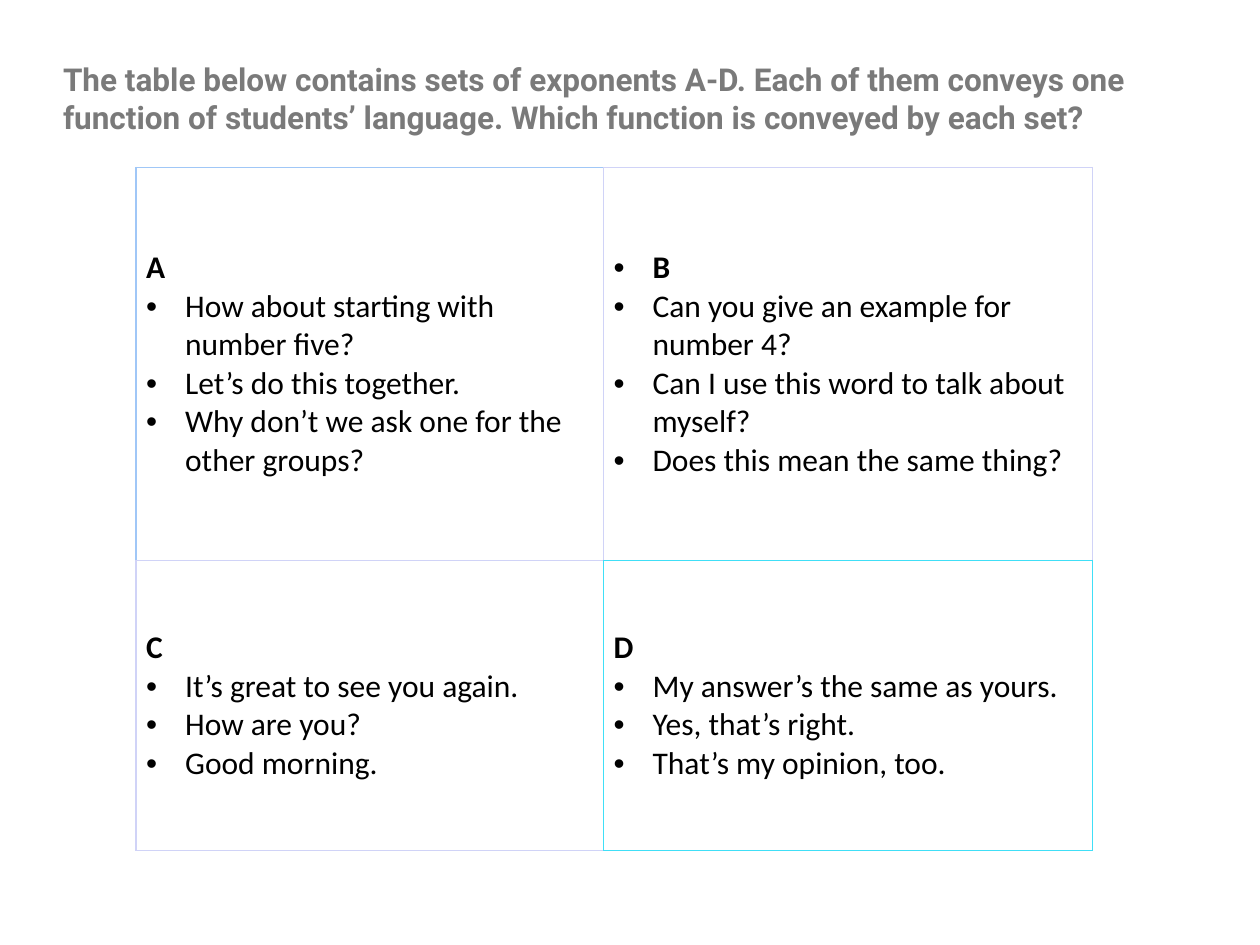
from lxml.etree import SubElement
from pptx import Presentation
from pptx.dml.color import RGBColor
from pptx.enum.text import MSO_ANCHOR
from pptx.oxml.ns import qn
from pptx.util import Inches, Pt

COLORS = {"title": "7A7A7A", "text": "000000", "blue": "A0C7F7",
          "lilac": "D0D3F7", "cyan": "40DFF7"}
COL_WIDTHS = [3.71, 3.88]
ROW_HEIGHTS = [3.12, 2.3]
INSET, INDENT = 0.08, 0.31

# Letter, whether the letter is bulleted, exponents, borders (left, right, top, bottom)
SETS = [
    ("A", False,
     ["How about starting with number five?", "Let’s do this together.",
      "Why don’t we ask one for the other groups?"],
     [("blue", 1), ("lilac", 1), ("blue", 1), ("lilac", 1)]),
    ("B", True,
     ["Can you give an example for number 4?",
      "Can I use this word to talk about myself?",
      "Does this mean the same thing?"],
     [("lilac", 1), ("lilac", 0.75), ("lilac", 1), ("cyan", 1)]),
    ("C", False,
     ["It’s great to see you again.", "How are you?", "Good morning."],
     [("lilac", 1), ("cyan", 1), ("lilac", 1), ("lilac", 0.75)]),
    ("D", False,
     ["My answer’s the same as yours.", "Yes, that’s right.",
      "That’s my opinion, too."],
     [("cyan", 1), ("cyan", 0.75), ("cyan", 1), ("cyan", 0.75)]),
]


def style(p, name, color, bold):
    p.font.name, p.font.size, p.font.bold = name, Pt(18), bold
    p.font.color.rgb = RGBColor.from_string(COLORS[color])


def set_borders(cell, borders):
    tcPr = cell._tc.get_or_add_tcPr()
    for i, (side, (color, width)) in enumerate(zip("LRTB", borders)):
        ln = SubElement(tcPr, qn(f"a:ln{side}"), w=str(Pt(width)))
        fill = SubElement(ln, qn("a:solidFill"))
        SubElement(fill, qn("a:srgbClr"), val=COLORS[color])
        tcPr.insert(i, ln)  # borders come before the cell fill


prs = Presentation()
prs.slide_width, prs.slide_height = Inches(10), Inches(7.5)
s = prs.slides.add_slide(prs.slide_layouts[6])

# Table of exponents
table = s.shapes.add_table(2, 2, Inches(1.08), Inches(1.33),
                           Inches(sum(COL_WIDTHS)), Inches(sum(ROW_HEIGHTS))).table
table.first_row = table.horz_banding = False
for col, width in zip(table.columns, COL_WIDTHS):
    col.width = Inches(width)
for row, height in zip(table.rows, ROW_HEIGHTS):
    row.height = Inches(height)

for cell, (letter, letter_bullet, exponents, borders) in zip(table.iter_cells(), SETS):
    cell.fill.background()
    set_borders(cell, borders)
    cell.vertical_anchor = MSO_ANCHOR.MIDDLE
    cell.margin_left = cell.margin_right = Inches(INSET)
    cell.margin_top = cell.margin_bottom = Inches(INSET)
    tf = cell.text_frame
    tf.text = "\n".join([letter] + exponents)
    for i, p in enumerate(tf.paragraphs):
        style(p, "Calibri", "text", bold=i == 0)
        if i > 0 or letter_bullet:
            pPr = p._p.get_or_add_pPr()
            pPr.set("marL", str(Inches(INDENT)))
            pPr.set("indent", str(-Inches(INDENT)))
            bullet_font = pPr.makeelement(qn("a:buFont"), {"typeface": "Arial"})
            bullet = pPr.makeelement(qn("a:buChar"), {"char": "•"})
            pPr.insert(0, bullet_font)
            pPr.insert(1, bullet)

# Title
tf = s.shapes.add_textbox(Inches(0.5), Inches(0.47), Inches(9.25), Inches(0.61)).text_frame
tf.word_wrap = True
tf.vertical_anchor = MSO_ANCHOR.MIDDLE
tf.margin_left = tf.margin_right = tf.margin_top = tf.margin_bottom = 0
tf.text = ("The table below contains sets of exponents A-D. Each of them conveys one "
           "function of students’ language. Which function is conveyed by each set?")
style(tf.paragraphs[0], "Roboto", "title", bold=True)

prs.save("out.pptx")
